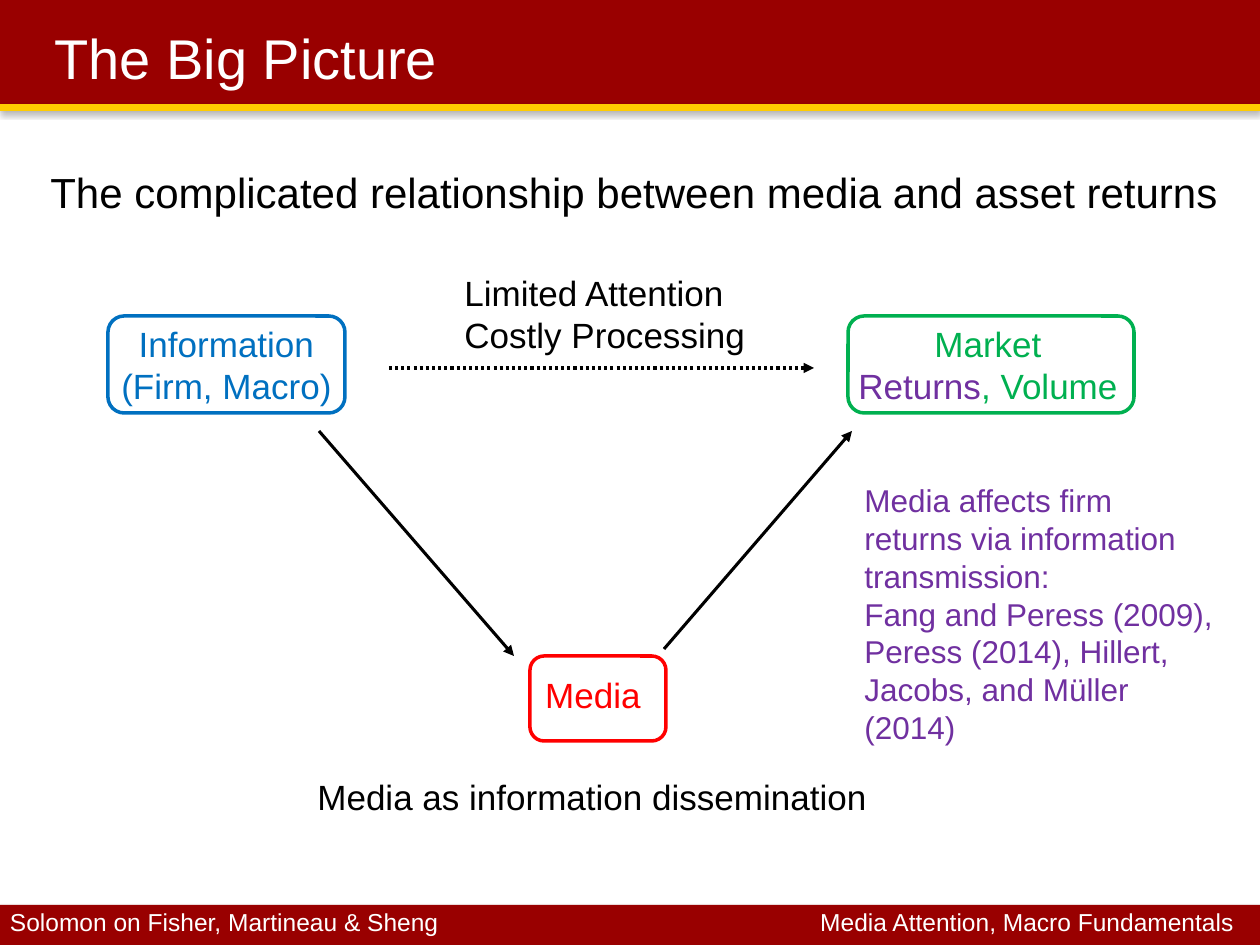
from dataclasses import dataclass

from pptx import Presentation
from pptx.dml.color import RGBColor
from pptx.enum.dml import MSO_LINE
from pptx.enum.shapes import MSO_CONNECTOR, MSO_SHAPE
from pptx.enum.text import MSO_ANCHOR, PP_ALIGN
from pptx.oxml.ns import qn
from pptx.shapes.autoshape import Shape
from pptx.slide import Slide
from pptx.util import Emu, Pt
from lxml.etree import SubElement

PX_PER_INCH = 126
WIDTH, HEIGHT = 1260, 945

CRIMSON = RGBColor(0x99, 0x00, 0x00)
GOLD = RGBColor(0xFF, 0xCC, 0x00)
WHITE = RGBColor(0xFF, 0xFF, 0xFF)
BLACK = RGBColor(0x00, 0x00, 0x00)
RED = RGBColor(0xFF, 0x00, 0x00)
BLUE = RGBColor(0x00, 0x70, 0xC0)
GREEN = RGBColor(0x00, 0xB0, 0x50)
PURPLE = RGBColor(0x70, 0x30, 0xA0)


@dataclass(frozen=True)
class Box:
    left: int
    top: int
    width: int
    height: int


@dataclass(frozen=True)
class Bar:
    box: Box
    color: RGBColor
    shadow_opacity: int


@dataclass(frozen=True)
class Node:
    box: Box
    color: RGBColor


@dataclass(frozen=True)
class Label:
    box: Box
    paragraphs: tuple[str, ...]
    size: int = 20
    color: RGBColor = BLACK
    align: PP_ALIGN = PP_ALIGN.LEFT
    anchor: MSO_ANCHOR = MSO_ANCHOR.TOP
    padded: bool = True
    wrap: bool = True


@dataclass(frozen=True)
class Arrow:
    start: tuple[int, int]
    end: tuple[int, int]
    dotted: bool = False


BARS = (
    Bar(Box(0, 905, WIDTH, 40), CRIMSON, 35),
    Bar(Box(0, 0, WIDTH, 104), CRIMSON, 35),
    Bar(Box(0, 104, WIDTH, 7), GOLD, 38),
)
NODES = (
    Node(Box(108, 316, 237, 97), BLUE),
    Node(Box(848, 316, 286, 97), GREEN),
    Node(Box(530, 656, 136, 85), RED),
)
ARROWS = (
    Arrow((319, 431), (514, 656)),
    Arrow((389, 368), (814, 368), dotted=True),
    Arrow((664, 649), (852, 431)),
)
LABELS = (
    Label(Box(10, 907, 494, 30), ("Solomon on Fisher, Martineau & Sheng",),
          14, WHITE, padded=False),
    Label(Box(746, 907, 488, 30), ("Media Attention, Macro Fundamentals",),
          14, WHITE, PP_ALIGN.RIGHT, padded=False),
    Label(Box(42, 21, 1134, 73), ("The Big Picture",), 32, WHITE,
          anchor=MSO_ANCHOR.MIDDLE),
    Label(Box(38, 160, 1222, 73),
          ("The complicated relationship between media and asset returns",), 24),
    Label(Box(108, 316, 237, 97), ("Information", "(Firm, Macro)"),
          color=BLUE, align=PP_ALIGN.CENTER, wrap=False),
    Label(Box(530, 667, 126, 55), ("Media",), color=RED, align=PP_ALIGN.CENTER),
    Label(Box(305, 769, 645, 55), ("Media as information dissemination",)),
    Label(Box(452, 265, 310, 97), ("Limited Attention\nCostly Processing",)),
    Label(Box(852, 475, 377, 280),
          ("Media affects firm returns via information transmission:",
           "Fang and Peress (2009), Peress (2014), Hillert, Jacobs, and Müller (2014)"),
          18, PURPLE),
)
MARKET = Label(Box(842, 316, 292, 97), ("Market", "Returns"),
               color=GREEN, align=PP_ALIGN.CENTER)


def px(length: int) -> Emu:
    return Emu(round(length * 914400 / PX_PER_INCH))


def place(box: Box) -> tuple[Emu, Emu, Emu, Emu]:
    return px(box.left), px(box.top), px(box.width), px(box.height)


def draw_bar(slide: Slide, bar: Bar) -> None:
    shape = slide.shapes.add_shape(MSO_SHAPE.RECTANGLE, *place(bar.box))
    shape.fill.solid()
    shape.fill.fore_color.rgb = bar.color
    shape.line.fill.background()
    effects = SubElement(shape._element.spPr, qn("a:effectLst"))
    shadow = SubElement(effects, qn("a:outerShdw"), blurRad=str(Pt(3.1)),
                        dist=str(Pt(1.8)), dir="5400000", rotWithShape="0")
    black = SubElement(shadow, qn("a:srgbClr"), val=str(BLACK))
    SubElement(black, qn("a:alpha"), val=str(bar.shadow_opacity * 1000))


def draw_node(slide: Slide, node: Node) -> None:
    shape = slide.shapes.add_shape(MSO_SHAPE.ROUNDED_RECTANGLE, *place(node.box))
    shape.shadow.inherit = False
    shape.fill.background()
    shape.line.color.rgb = node.color
    shape.line.width = Pt(2)


def draw_arrow(slide: Slide, arrow: Arrow) -> None:
    ends = [px(value) for value in arrow.start + arrow.end]
    connector = slide.shapes.add_connector(MSO_CONNECTOR.STRAIGHT, *ends)
    connector.line.color.rgb = BLACK
    connector.line.width = Pt(1.75)
    if arrow.dotted:
        connector.line.dash_style = MSO_LINE.ROUND_DOT
    SubElement(connector.line._get_or_add_ln(), qn("a:tailEnd"), type="triangle")
    SubElement(connector._element.spPr, qn("a:effectLst"))


def draw_label(slide: Slide, label: Label) -> Shape:
    textbox = slide.shapes.add_textbox(*place(label.box))
    frame = textbox.text_frame
    frame.word_wrap = label.wrap
    frame.vertical_anchor = label.anchor
    if not label.padded:
        frame.margin_left = frame.margin_right = 0
        frame.margin_top = frame.margin_bottom = 0
    for index, text in enumerate(label.paragraphs):
        paragraph = frame.add_paragraph() if index else frame.paragraphs[0]
        paragraph.text = text
        paragraph.alignment = label.align
        paragraph.font.name = "Arial"
        paragraph.font.size = Pt(label.size)
        paragraph.font.color.rgb = label.color
    return textbox


def draw_market_label(slide: Slide) -> None:
    """Set returns apart from volume in the colour of the cited studies."""
    measures = draw_label(slide, MARKET).text_frame.paragraphs[1]
    measures.runs[0].font.color.rgb = PURPLE
    measures.add_run().text = ", Volume"


def main() -> None:
    presentation = Presentation()
    presentation.slide_width, presentation.slide_height = px(WIDTH), px(HEIGHT)
    slide = presentation.slides.add_slide(presentation.slide_layouts[6])
    for bar in BARS:
        draw_bar(slide, bar)
    for node in NODES:
        draw_node(slide, node)
    for arrow in ARROWS:
        draw_arrow(slide, arrow)
    for label in LABELS:
        draw_label(slide, label)
    draw_market_label(slide)
    presentation.save("out.pptx")


if __name__ == "__main__":
    main()
